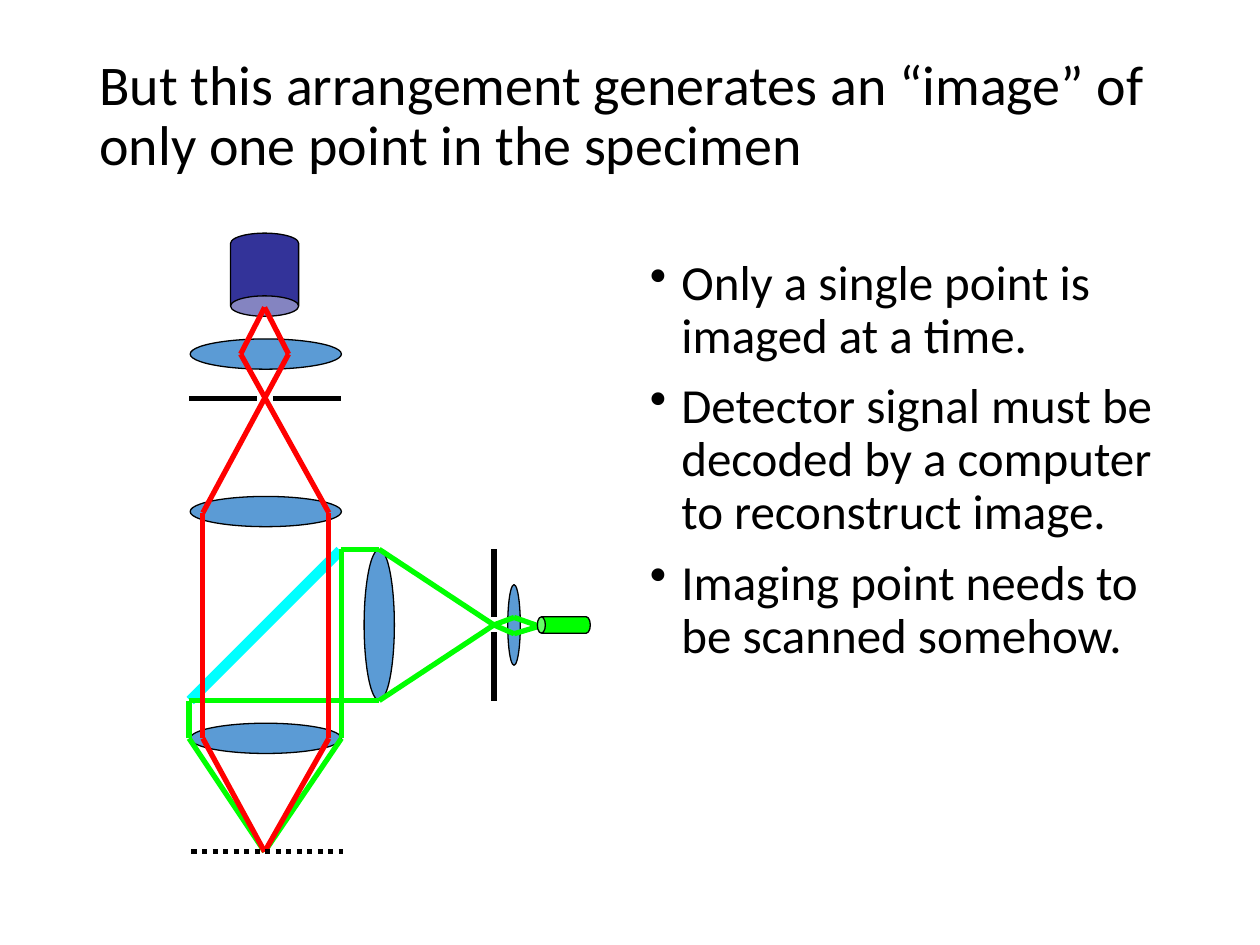
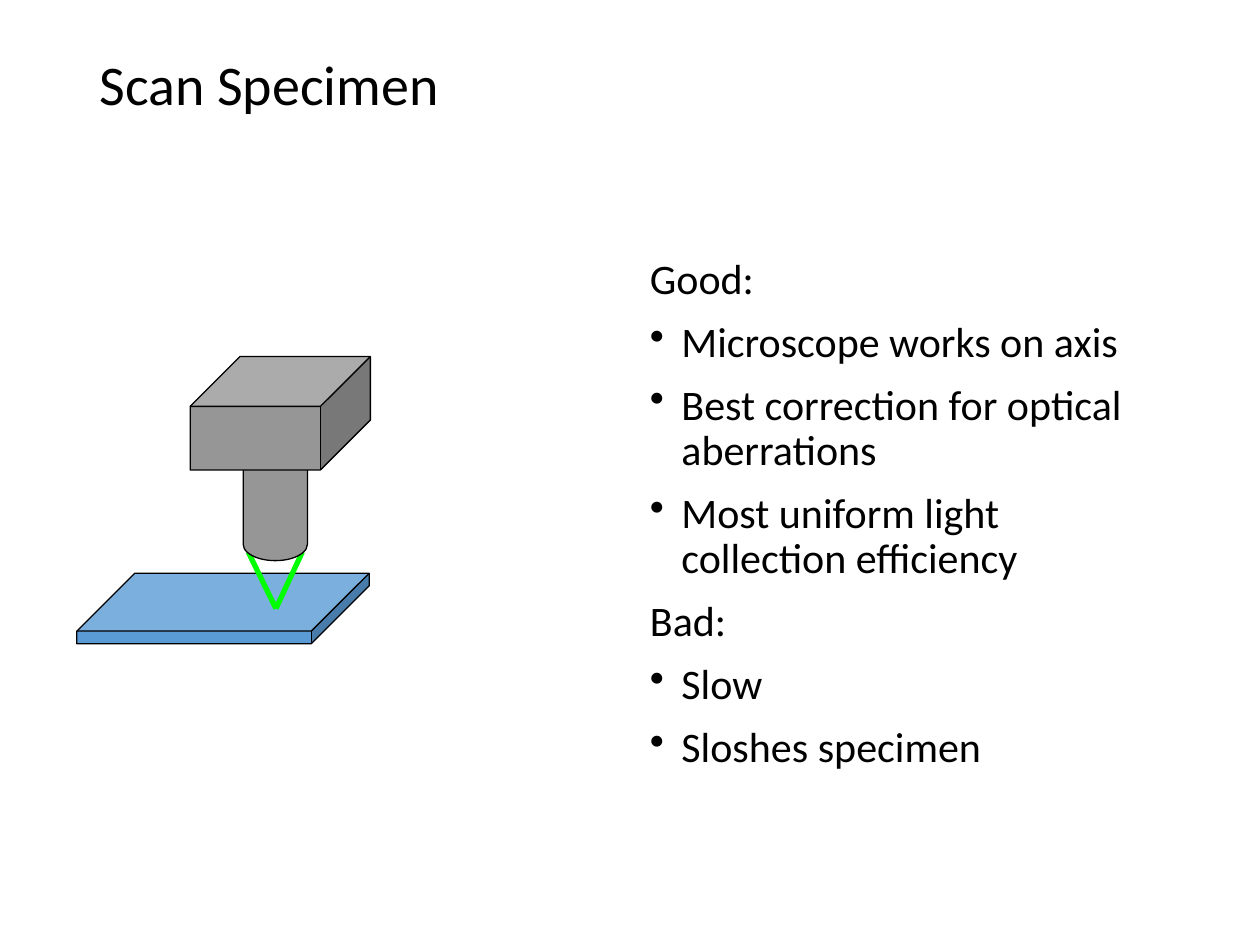
from typing import NamedTuple

from lxml import etree
from pptx import Presentation
from pptx.dml.color import RGBColor
from pptx.enum.dml import MSO_LINE
from pptx.enum.shapes import MSO_CONNECTOR, MSO_SHAPE
from pptx.enum.text import MSO_ANCHOR
from pptx.oxml.ns import qn
from pptx.util import Emu, Pt

# Units and shared style: 100 px to the inch
SCALE = 9144
FONT = "Calibri"
TITLE_BOX = (69, 40, 862, 145)
BODY_BOX = (506, 200, 425, 476)
INDENT = 25

BLACK = RGBColor(0x00, 0x00, 0x00)
BLUE = RGBColor(0x5B, 0x9B, 0xD5)
NAVY = RGBColor(0x33, 0x33, 0x99)
GRAY = RGBColor(0x96, 0x96, 0x96)
CYAN = RGBColor(0x00, 0xFF, 0xFF)
GREEN = RGBColor(0x00, 0xFF, 0x00)
RED = RGBColor(0xFF, 0x00, 0x00)

OVAL = MSO_SHAPE.OVAL
CAN = MSO_SHAPE.CAN
CUBE = MSO_SHAPE.CUBE
STRAIGHT = MSO_CONNECTOR.STRAIGHT
DOTS = MSO_LINE.ROUND_DOT
TOP = MSO_ANCHOR.TOP


class Solid(NamedTuple):
    kind: int
    box: tuple[int, int, int, int]
    fill: RGBColor
    adj: float | None = None
    turn: int = 0


class Ray(NamedTuple):
    points: list[tuple[int, int]]
    color: RGBColor
    width: float = 3
    dash: int | None = None


def px(n: int) -> Emu:
    return Emu(n * SCALE)


def lens(x: int, y: int, wide: int, high: int) -> Solid:
    """Lens centred on x, y."""
    return Solid(OVAL, (x - wide // 2, y - high // 2, wide, high), BLUE)


def draw_solid(slide, part: Solid) -> None:
    shape = slide.shapes.add_shape(part.kind, *map(px, part.box))
    shape.shadow.inherit = False
    shape.rotation = part.turn
    if part.adj is not None:
        shape.adjustments[0] = part.adj
    shape.fill.solid()
    shape.fill.fore_color.rgb = part.fill
    shape.line.color.rgb = BLACK
    shape.line.width = Pt(0.75)


def draw_ray(slide, ray: Ray) -> None:
    for start, end in zip(ray.points, ray.points[1:]):
        line = slide.shapes.add_connector(STRAIGHT, *map(px, start + end))
        line.line.color.rgb = ray.color
        line.line.width = Pt(ray.width)
        if ray.dash is not None:
            line.line.dash_style = ray.dash
        etree.SubElement(line._element.spPr, qn("a:effectLst"))


def draw(slide, parts: list[Solid | Ray]) -> None:
    for part in parts:
        if isinstance(part, Solid):
            draw_solid(slide, part)
        else:
            draw_ray(slide, part)


def add_text(slide, box: tuple[int, int, int, int], lines: list[str], *,
             size: int, gap: int = 0) -> None:
    """Lines that start with a bullet sign become bulleted paragraphs."""
    frame = slide.shapes.add_textbox(*map(px, box)).text_frame
    frame.word_wrap = True
    frame.vertical_anchor = TOP
    for i, line in enumerate(lines):
        para = frame.paragraphs[0] if i == 0 else frame.add_paragraph()
        para.line_spacing = 0.9
        para.space_before = Pt(gap)
        run = para.add_run()
        run.text = line.removeprefix("•")
        run.font.name = FONT
        run.font.size = Pt(size)
        run.font.color.rgb = BLACK
        if line.startswith("•"):
            props = para._p.get_or_add_pPr()
            props.set("marL", str(px(INDENT)))
            props.set("indent", str(px(-INDENT)))
            etree.SubElement(props, qn("a:buChar")).set("char", "•")


def add_page(deck, title: str, body: list[str], size: int,
             parts: list[Solid | Ray]) -> None:
    slide = deck.slides.add_slide(deck.slide_layouts[6])
    draw(slide, parts)
    add_text(slide, TITLE_BOX, [title], size=32)
    add_text(slide, BODY_BOX, body, size=size, gap=10)


# Light path of the confocal microscope, back to front
FOCUS = (210, 676)
PINHOLE = (392, 496)
LASER = (428, 497)
SCOPE = [
    *(lens(211, y, 120, 24) for y in (281, 586, 406)),
    lens(408, 496, 10, 64),
    # Detector pinhole and beam splitter
    Ray([(150, 316), (204, 316)], BLACK),
    Ray([(217, 316), (271, 316)], BLACK),
    Ray([(270, 437), (151, 556)], CYAN, 6),
    lens(301, 496, 24, 120),
    # Source pinhole
    Ray([(392, 436), (392, 490)], BLACK),
    Ray([(392, 502), (392, 556)], BLACK),
    # Light to the specimen
    Ray([PINHOLE, (301, 436), (271, 436), (271, 586), FOCUS], GREEN),
    Ray([PINHOLE, (301, 556), (150, 556), (150, 586), FOCUS], GREEN),
    # Light back to the detector
    Ray([FOCUS, (261, 586), (261, 407), (191, 281)], RED),
    Ray([FOCUS, (161, 586), (161, 407), (229, 281)], RED),
    Solid(CAN, (183, 185, 54, 66), NAVY, 0.3, 180),
    # Laser and its focus
    Ray([PINHOLE, (408, 490), LASER], GREEN),
    Ray([PINHOLE, (408, 503), LASER], GREEN),
    Solid(CAN, (441, 475, 13, 42), GREEN, 0.49, 270),
    Ray([(152, 676), (272, 676)], BLACK, dash=DOTS),
    Ray([(191, 281), (210, 244), (229, 281)], RED),
]

# Microscope head above a moving specimen
STAGE = [
    Solid(CUBE, (61, 455, 232, 56), BLUE, 0.82),
    Ray([(197, 438), (219, 483), (240, 438)], GREEN),
    Solid(CAN, (193, 340, 51, 105), GRAY, 0.51),
    Solid(CUBE, (151, 283, 143, 90), GRAY, 0.44),
]


def main() -> None:
    deck = Presentation()
    deck.slide_width, deck.slide_height = px(1000), px(750)
    add_page(
        deck,
        "But this arrangement generates an “image” of only one point in the specimen",
        ["•Only a single point is imaged at a time.",
         "•Detector signal must be decoded by a computer to reconstruct image.",
         "•Imaging point needs to be scanned somehow."],
        28, SCOPE)
    add_page(
        deck,
        "Scan Specimen",
        ["Good:",
         "•Microscope works on axis",
         "•Best correction for optical aberrations",
         "•Most uniform light collection efficiency",
         "Bad:",
         "•Slow",
         "•Sloshes specimen"],
        24, STAGE)
    deck.save("out.pptx")


if __name__ == "__main__":
    main()
